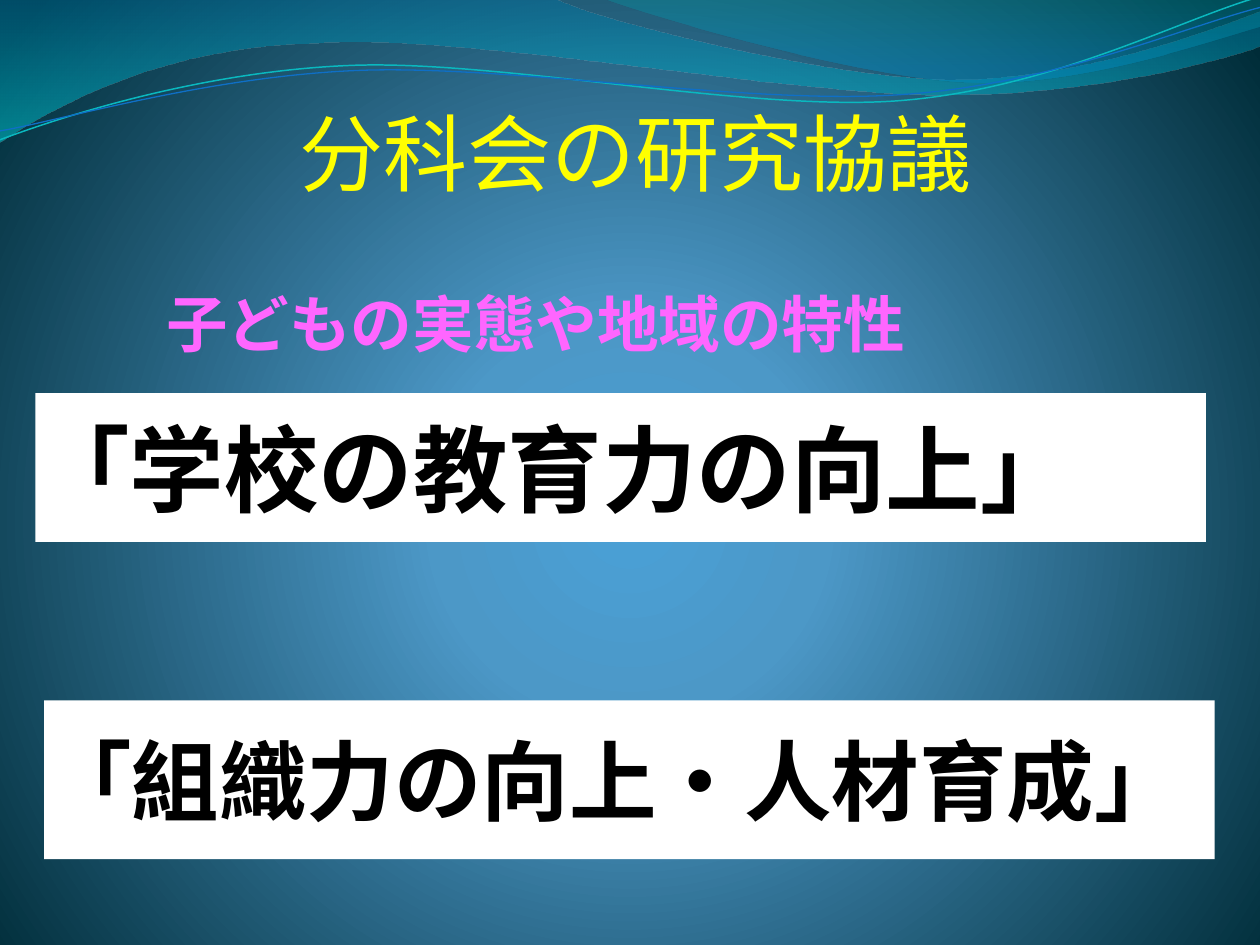
from math import cos, radians, sin

from lxml.etree import SubElement
from pptx import Presentation
from pptx.dml.color import RGBColor
from pptx.enum.shapes import MSO_SHAPE
from pptx.enum.text import MSO_ANCHOR, PP_ALIGN
from pptx.oxml.ns import qn
from pptx.util import Inches, Pt

FONT = "Noto Sans CJK JP"
RIPPLE_TILT = -2.7

# Gradient stops: position %, colour, opacity %
BACKGROUND = [(0, "4AA0D6", 100), (25, "4C98C7", 100), (100, "002C38", 100)]

# Waves: start point, then line ends (2 numbers) or Bezier curves (6 numbers)
WAVE_BANDS = [
    ((0, 0), [(4.4, -0.01), (4.76, 0.17, 6.64, 0.63, 7.58, 0.63),
              (8.53, 0.63, 9.58, 0.26, 10, 0.09), (10.01, 0.36),
              (9.83, 0.44, 8.7, 0.76, 7.46, 0.75),
              (6.22, 0.75, 3.82, 0.28, 2.57, 0.34),
              (1.29, 0.36, 0.46, 0.83, -0.01, 1.13), (0, 0)],
     [(0, "0074A1", 45), (100, "00C6CF", 55)]),
    ((4.79, -0.01), [(5.09, 0.11, 6.82, 0.62, 7.69, 0.65),
                     (8.56, 0.69, 9.61, 0.32, 10, 0.21), (10, 0), (4.79, -0.01)],
     [(0, "00A1A9", 30), (80, "008BBF", 45)]),
]
WAVE_LINES = [
    ((0, 1.11), [(0.48, 0.93, 1.58, 0.57, 2.77, 0.52),
                 (3.95, 0.47, 5.93, 0.89, 7.13, 0.8),
                 (8.33, 0.71, 9.38, 0.15, 9.98, -0.02)], "0AB8BF", 0.85),
    ((0, 1.04), [(0.47, 0.96, 1.64, 0.61, 2.83, 0.56),
                 (4.03, 0.51, 5.97, 0.84, 7.17, 0.75),
                 (8.36, 0.67, 9.41, 0.21, 10, 0.06)], "0F6FC6", 0.75),
]

# Text parts: wording, box, format
PANEL = dict(panel="FFFFFF", color="000000", bold=True, align=PP_ALIGN.JUSTIFY,
             anchor=MSO_ANCHOR.MIDDLE, insets=(0, 0, 0.02, 0))
TEXTS = [
    ("「学校の教育力の向上」", (0.28, 3.12, 9.29, 1.18), dict(PANEL, size=54)),
    ("分科会の研究協議", (2.01, 0.76, 6.14, 1.1),
     dict(size=48, color="FFFF00", insets=(0, 0.05, 0.02, 0.05), right_indent=0.05)),
    ("「組織力の向上・人材育成」", (0.35, 5.56, 9.29, 1.26), dict(PANEL, size=50)),
    ("子どもの実態や地域の特性", (0.35, 2.1, 7.8, 0.84),
     dict(size=44, color="FF66FF", bold=True, small_caps=True)),
]


def rgb(value):
    return RGBColor.from_string(value)


def set_gradient(properties, stops, circle=False):
    """Swap the solid fill in the given properties for a gradient."""
    solid = properties.find(qn("a:solidFill"))
    gradient = SubElement(properties, qn("a:gradFill"), rotWithShape="1")
    properties.replace(solid, gradient)
    stop_list = SubElement(gradient, qn("a:gsLst"))
    for position, color, opacity in stops:
        stop = SubElement(stop_list, qn("a:gs"), pos=str(position * 1000))
        tint = SubElement(stop, qn("a:srgbClr"), val=color)
        if opacity < 100:
            SubElement(tint, qn("a:alpha"), val=str(opacity * 1000))
    if circle:
        center = SubElement(gradient, qn("a:path"), path="circle")
        SubElement(center, qn("a:fillToRect"),
                   l="10000", t="110000", r="10000", b="100000")
    else:
        SubElement(gradient, qn("a:lin"), ang="5400000", scaled="1")


def point_pairs(segment):
    return list(zip(segment[::2], segment[1::2]))


def turn(point, center, degrees):
    dx, dy = point[0] - center[0], point[1] - center[1]
    c, s = cos(radians(degrees)), sin(radians(degrees))
    return center[0] + dx * c - dy * s, center[1] + dx * s + dy * c


def add_wave(slide, start, segments, close=False, tilt=0):
    """Lay out the wave level, with true Bezier curves, then tilt the shape."""
    last = segments[-1][-2:]
    center = ((start[0] + last[0]) / 2, (start[1] + last[1]) / 2)
    curves = [[tuple(Inches(v) for v in turn(p, center, -tilt))
               for p in point_pairs(segment)] for segment in [start, *segments]]
    ends = [curve[-1] for curve in curves]

    builder = slide.shapes.build_freeform(*ends[0])
    builder.add_line_segments(ends[1:], close=close)
    wave = builder.convert_to_shape()
    wave.shadow.inherit = False

    left, top = wave.left, wave.top
    outline = wave.element.find(".//" + qn("a:path"))
    for line, curve in zip(outline.findall(qn("a:lnTo")), curves[1:]):
        if len(curve) == 3:
            bezier = SubElement(outline, qn("a:cubicBezTo"))
            outline.replace(line, bezier)
            for x, y in curve:
                SubElement(bezier, qn("a:pt"), x=str(x - left), y=str(y - top))
    wave.rotation = tilt
    return wave


def add_text(slide, text, box, *, size, color, bold=False, panel=None,
             align=PP_ALIGN.CENTER, anchor=MSO_ANCHOR.TOP,
             insets=(0.1, 0.05, 0.1, 0.05), right_indent=0, small_caps=False):
    place = [Inches(length) for length in box]
    if panel:
        holder = slide.shapes.add_shape(MSO_SHAPE.RECTANGLE, *place)
        holder.shadow.inherit = False
        holder.fill.solid()
        holder.fill.fore_color.rgb = rgb(panel)
        holder.line.fill.background()
    else:
        holder = slide.shapes.add_textbox(*place)
    frame = holder.text_frame
    frame.word_wrap = True
    frame.vertical_anchor = anchor
    (frame.margin_left, frame.margin_top,
     frame.margin_right, frame.margin_bottom) = [Inches(inset) for inset in insets]
    paragraph = frame.paragraphs[0]
    paragraph.alignment = align
    if right_indent:
        paragraph._p.get_or_add_pPr().set("marR", str(Inches(right_indent)))
    run = paragraph.add_run()
    run.text = text
    run.font.size, run.font.bold, run.font.name = Pt(size), bold, FONT
    run.font.color.rgb = rgb(color)
    properties = run.font._element
    SubElement(properties, qn("a:ea"), typeface=FONT)
    if small_caps:
        properties.set("cap", "small")


def main():
    deck = Presentation()
    deck.slide_width, deck.slide_height = Inches(10), Inches(7.5)
    slide = deck.slides.add_slide(deck.slide_layouts[6])

    # Background
    slide.background.fill.solid()
    set_gradient(slide.element.find(".//" + qn("p:bgPr")), BACKGROUND, circle=True)

    # Waves along the top edge
    for start, segments, stops in WAVE_BANDS:
        band = add_wave(slide, start, segments, close=True)
        band.line.fill.background()
        band.fill.solid()
        set_gradient(band.element.spPr, stops)
    for start, segments, color, width in WAVE_LINES:
        ripple = add_wave(slide, start, segments, tilt=RIPPLE_TILT)
        ripple.fill.background()
        ripple.line.color.rgb = rgb(color)
        ripple.line.width = Pt(width)

    # Title, heading and panels
    for text, box, text_format in TEXTS:
        add_text(slide, text, box, **text_format)

    deck.save("out.pptx")


if __name__ == "__main__":
    main()
